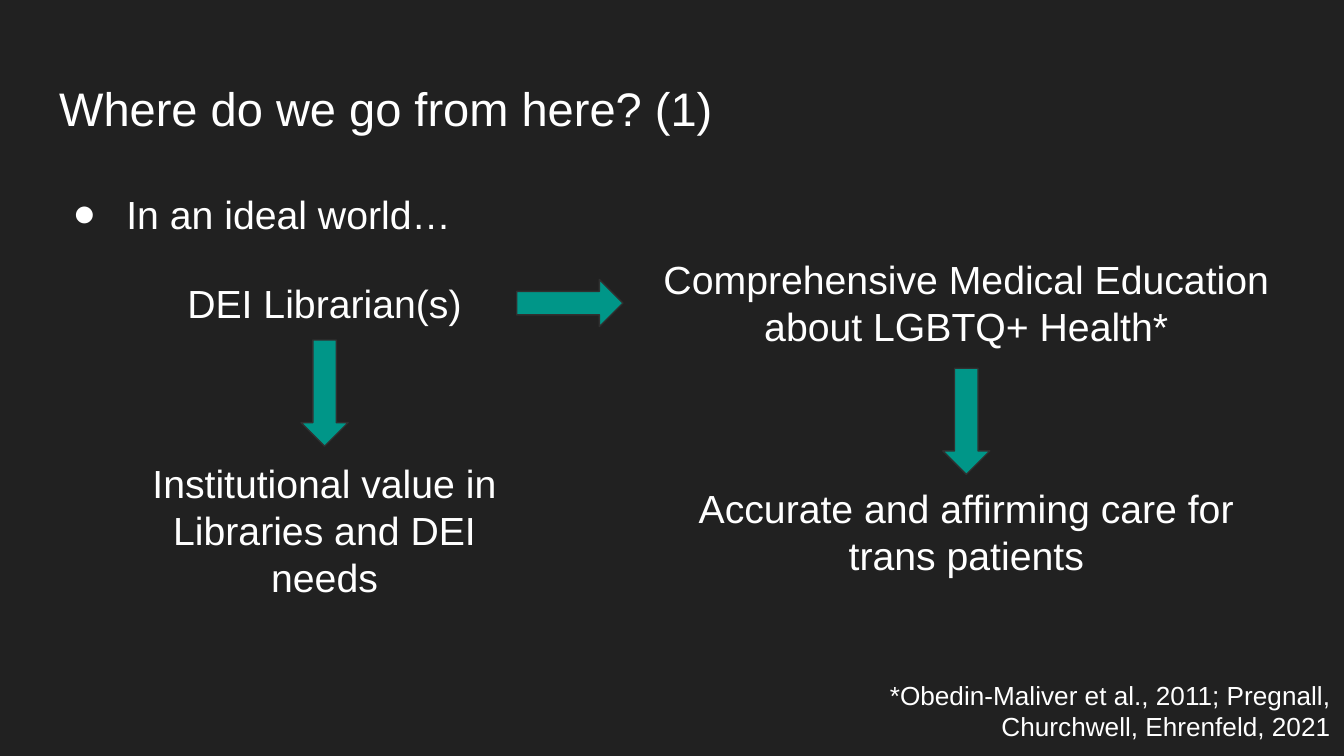
from lxml import etree
from pptx import Presentation
from pptx import util as u
from pptx.dml.color import RGBColor
from pptx.enum import shapes, text
from pptx.oxml import ns

BACKGROUND = RGBColor(0x21, 0x21, 0x21)
WHITE = RGBColor(0xFF, 0xFF, 0xFF)
TEAL = RGBColor(0x00, 0x96, 0x88)
OUTLINE = RGBColor(0x30, 0x30, 0x30)

FONT = "Arial"
BODY_SIZE = 21
WIDTH = 10
HEIGHT = WIDTH * 9 / 16
MARGIN = 0.34
ARROW_WIDTH, ARROW_LENGTH = 0.35, 0.79

# Columns of the flow diagram: left edge and width
LIBRARY_COLUMN = (0.98, 2.87)
HEALTH_COLUMN = (4.8, 4.78)


def centre(column):
    left, width = column
    return left + width / 2


def place(box, left, top, width, height):
    box.left, box.top = u.Inches(left), u.Inches(top)
    box.width, box.height = u.Inches(width), u.Inches(height)


def write(box, words, size, align=text.PP_ALIGN.LEFT):
    frame = box.text_frame
    frame.word_wrap = True
    frame.auto_size = text.MSO_AUTO_SIZE.NONE
    frame.vertical_anchor = text.MSO_ANCHOR.TOP
    frame.margin_left = frame.margin_right = u.Inches(0.1)
    frame.margin_top = frame.margin_bottom = u.Inches(0.1)
    paragraph = frame.paragraphs[0]
    paragraph.alignment = align
    paragraph.space_before = u.Pt(0)
    run = paragraph.add_run()
    run.text = words
    run.font.name, run.font.size = FONT, u.Pt(size)
    run.font.color.rgb = WHITE
    return paragraph


def add_bullet(paragraph):
    properties = paragraph._p.get_or_add_pPr()
    properties.set("marL", str(u.Inches(0.5)))
    properties.set("indent", str(u.Inches(-0.4)))
    colour = etree.SubElement(properties, ns.qn("a:buClr"))
    etree.SubElement(colour, ns.qn("a:srgbClr"), val=str(WHITE))
    etree.SubElement(properties, ns.qn("a:buFont"), typeface=FONT)
    etree.SubElement(properties, ns.qn("a:buChar"), char="●")


def add_label(slide, words, column, top, height, size=BODY_SIZE,
              align=text.PP_ALIGN.CENTER):
    left, width = column
    label = slide.shapes.add_textbox(
        u.Inches(left), u.Inches(top), u.Inches(width), u.Inches(height))
    write(label, words, size, align)


def add_arrow(slide, centre_x, top, rotation=0):
    arrow = slide.shapes.add_shape(
        shapes.MSO_SHAPE.DOWN_ARROW,
        u.Inches(centre_x - ARROW_WIDTH / 2), u.Inches(top),
        u.Inches(ARROW_WIDTH), u.Inches(ARROW_LENGTH))
    arrow.rotation = rotation
    arrow.shadow.inherit = False
    arrow.fill.solid()
    arrow.fill.fore_color.rgb = TEAL
    arrow.line.color.rgb = OUTLINE
    arrow.line.width = u.Pt(0.75)


def main():
    deck = Presentation()
    deck.slide_width, deck.slide_height = u.Inches(WIDTH), u.Inches(HEIGHT)
    slide = deck.slides.add_slide(deck.slide_layouts[1])
    slide.background.fill.solid()
    slide.background.fill.fore_color.rgb = BACKGROUND

    # Title and opening bullet
    title, body = slide.placeholders
    place(title, MARGIN, 0.49, WIDTH - 2 * MARGIN, 0.63)
    write(title, "Where do we go from here? (1)", 25.2)
    place(body, MARGIN, 1.26, WIDTH - 2 * MARGIN, 3.74)
    opening = write(body, "In an ideal world…", BODY_SIZE)
    opening.line_spacing = 1.15
    add_bullet(opening)

    # Library column
    add_label(slide, "DEI Librarian(s)", LIBRARY_COLUMN, 1.98, 0.56)
    add_arrow(slide, centre(LIBRARY_COLUMN), 2.53)
    add_label(slide, "Institutional value in Libraries and DEI needs",
              LIBRARY_COLUMN, 3.32, 1.26)

    # Link from librarians to education
    add_arrow(slide, 4.24, 1.86, rotation=270)

    # Health column
    add_label(slide, "Comprehensive Medical Education about LGBTQ+ Health*",
              HEALTH_COLUMN, 1.8, 0.91)
    add_arrow(slide, centre(HEALTH_COLUMN), 2.74)
    add_label(slide, "Accurate and affirming care for trans patients",
              HEALTH_COLUMN, 3.5, 0.91)

    # Citation in the bottom right corner
    citation_width, citation_height = 4.33, 0.67
    add_label(slide,
              "*Obedin-Maliver et al., 2011; Pregnall, "
              "Churchwell, Ehrenfeld, 2021",
              (WIDTH - citation_width, citation_width),
              HEIGHT - citation_height, citation_height,
              size=14, align=text.PP_ALIGN.RIGHT)

    deck.save("out.pptx")


if __name__ == "__main__":
    main()
